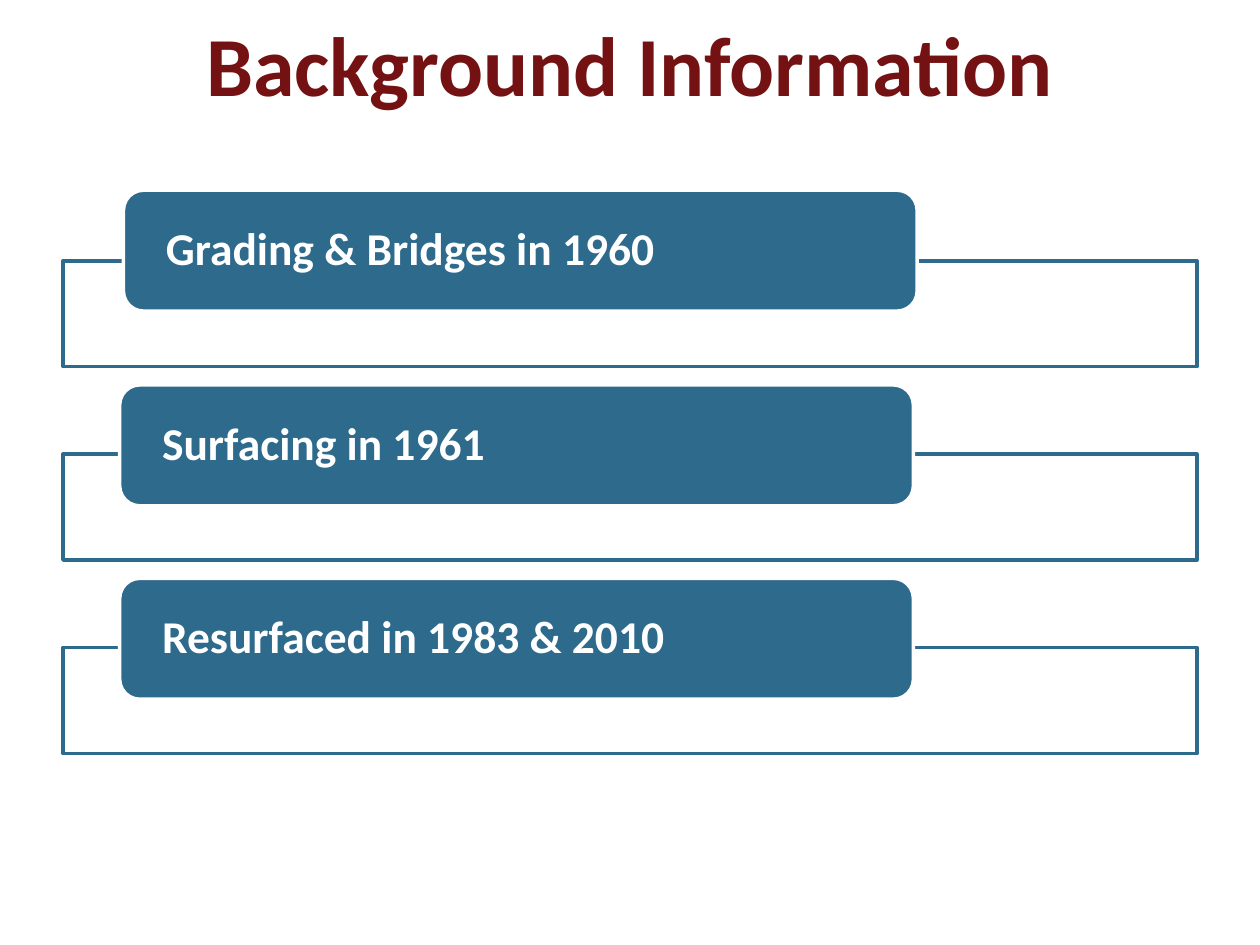
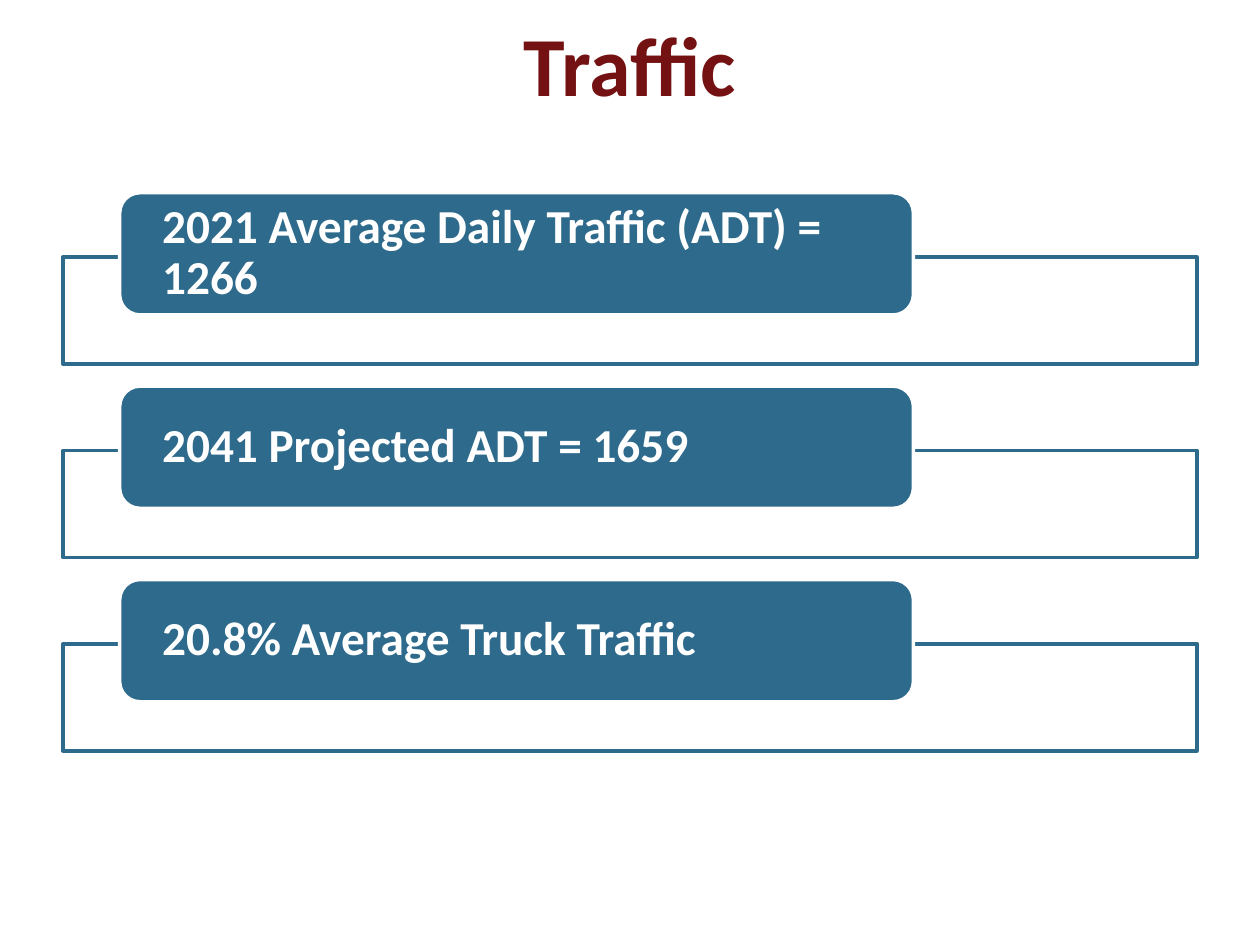
from dataclasses import dataclass

import lxml.etree
import pptx
import pptx.dml.color
import pptx.enum.shapes
import pptx.enum.text
import pptx.oxml.ns
import pptx.util

Inches = pptx.util.Inches
Pt = pptx.util.Pt
KINDS = pptx.enum.shapes.MSO_SHAPE
ALIGN = pptx.enum.text.PP_ALIGN
MIDDLE = pptx.enum.text.MSO_ANCHOR.MIDDLE

# Shared look
RED, BLUE, WHITE = "741112", "2E6A8C", "FFFFFF"
FONT = "Calibri"
LEFT, WIDTH = 0.5, 9
TAG_LEFT, TAG_WIDTH = 0.95, 6.3
PITCH = 3.07 / 2  # three rows, two equal steps


@dataclass
class Row:
    text: str
    dx: float = 0
    dy: float = 0


@dataclass
class Page:
    title: str
    rows: list[Row]
    size: float
    frame_top: float
    frame_high: float
    tag_top: float
    tag_high: float


PAGES = [
    Page("Background Information",
         [Row("Grading & Bridges in 1960", 0.03, -0.01),
          Row("Surfacing in 1961"),
          Row("Resurfaced in 1983 & 2010")],
         26, 2.07, 0.84, 1.52, 0.93 + 0.03),
    Page("Traffic",
         [Row("2021 Average Daily Traffic (ADT) = 1266"),
          Row("2041 Projected ADT = 1659"),
          Row("20.8% Average Truck Traffic")],
         27, 2.04, 0.85, 1.53, 0.97),
]


def rgb(code: str) -> pptx.dml.color.RGBColor:
    return pptx.dml.color.RGBColor.from_string(code)


def apply(item, values: dict) -> None:
    for name, value in values.items():
        setattr(item, name, value)


def write(shape, text: str, size: float, color: str, frame: dict, para: dict) -> None:
    """Fill a shape with one bold, vertically centred paragraph."""
    apply(shape.text_frame, {"word_wrap": True, "vertical_anchor": MIDDLE, **frame})
    line = shape.text_frame.paragraphs[0]
    line.text = text
    apply(line, para)
    apply(line.font, {"name": FONT, "size": Pt(size), "bold": True})
    line.font.color.rgb = rgb(color)


def draw_box(slide, kind, left: float, top: float, width: float, high: float,
             fill: str, edge: str):
    box = slide.shapes.add_shape(
        kind, Inches(left), Inches(top), Inches(width), Inches(high))
    box.shadow.inherit = False
    box.fill.solid()
    box.fill.fore_color.rgb = rgb(fill)
    box.line.color.rgb = rgb(edge)
    box.line.width = Pt(2)
    return box


def fade(shape, percent: int) -> None:
    """Set the opacity of a solid fill."""
    qn = pptx.oxml.ns.qn
    color = shape.fill._xPr.find(qn("a:solidFill")).find(qn("a:srgbClr"))
    lxml.etree.SubElement(color, qn("a:alpha"), val=str(percent * 1000))


def draw_title(slide, text: str) -> None:
    box = slide.shapes.add_textbox(Inches(LEFT), Inches(0), Inches(WIDTH), Inches(1))
    write(box, text, 48, RED, {}, {"alignment": ALIGN.CENTER})


def draw_row(slide, page: Page, row: Row, step: float) -> None:
    frame = draw_box(slide, KINDS.RECTANGLE, LEFT, page.frame_top + step,
                     WIDTH, page.frame_high, WHITE, BLUE)
    fade(frame, 90)
    tag = draw_box(slide, KINDS.ROUNDED_RECTANGLE, TAG_LEFT + row.dx,
                   page.tag_top + step + row.dy, TAG_WIDTH, page.tag_high,
                   BLUE, WHITE)
    # The side margins clear the rounded corners
    side = Inches(0.29)
    write(tag, row.text, page.size, WHITE,
          {"margin_left": side, "margin_right": side,
           "margin_top": 0, "margin_bottom": 0},
          {"alignment": ALIGN.LEFT, "line_spacing": 0.9})


def main() -> None:
    deck = pptx.Presentation()
    apply(deck, {"slide_width": Inches(10), "slide_height": Inches(7.5)})
    for page in PAGES:
        slide = deck.slides.add_slide(deck.slide_layouts[6])
        for i, row in enumerate(page.rows):
            draw_row(slide, page, row, i * PITCH)
        draw_title(slide, page.title)
    deck.save("out.pptx")


if __name__ == "__main__":
    main()
